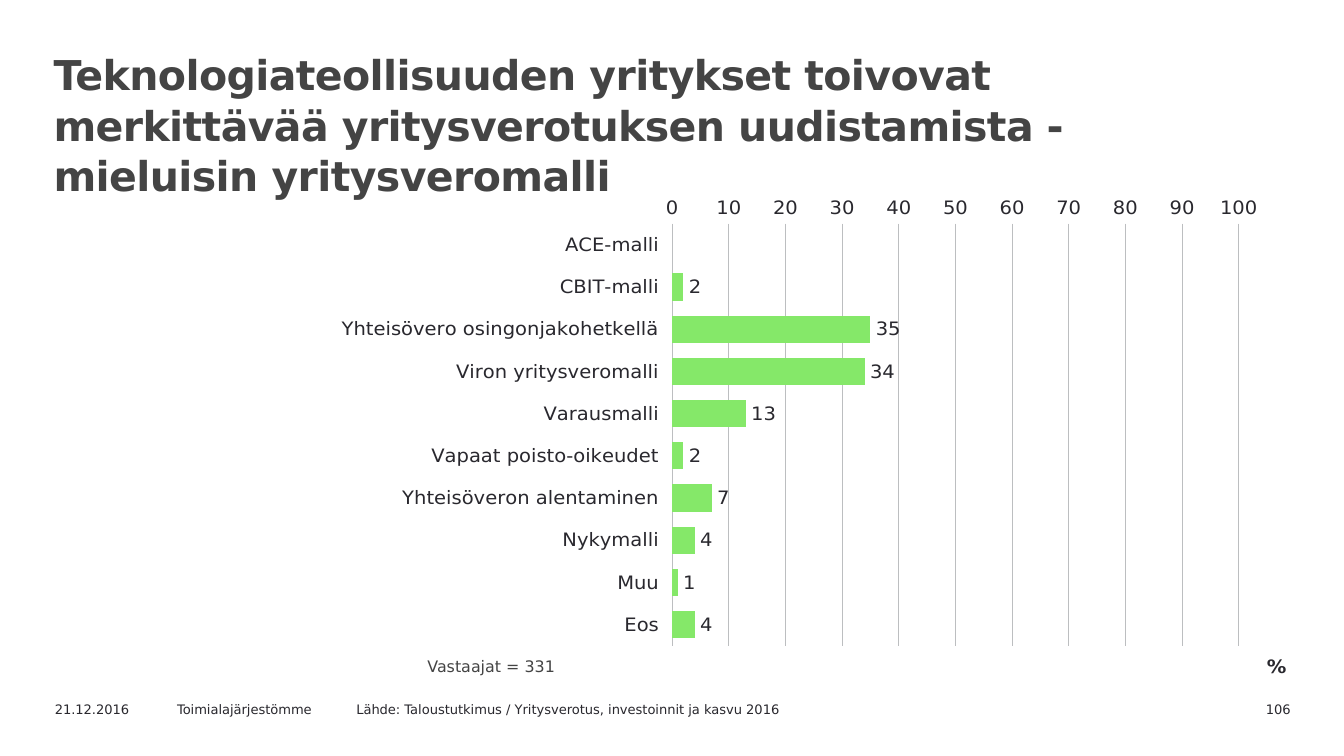
"""Build the slide about the company tax model preferred by technology companies."""
import lxml.etree
import pptx
import pptx.chart.data
import pptx.dml.color
import pptx.enum.chart
import pptx.enum.text
import pptx.oxml
import pptx.oxml.ns
import pptx.util

Pt = pptx.util.Pt
COLORS = {"title": "444444", "text": "29282E", "bar": "85E869", "grid": "BCBEC0"}
ANSWERS = {
    "ACE-malli": None,
    "CBIT-malli": 2,
    "Yhteisövero osingonjakohetkellä": 35,
    "Viron yritysveromalli": 34,
    "Varausmalli": 13,
    "Vapaat poisto-oikeudet": 2,
    "Yhteisöveron alentaminen": 7,
    "Nykymalli": 4,
    "Muu": 1,
    "Eos": 4,
}


def set_values(target, **values):
    """Set each named attribute on the target."""
    for name, value in values.items():
        setattr(target, name, value)


def rgb(name):
    """Return the named colour."""
    return pptx.dml.color.RGBColor.from_string(COLORS[name])


def manual_layout(x, y, **parts):
    """Return a chart layout element placed by fractions of the chart."""
    values = {"xMode": "edge", "yMode": "edge", "x": x, "y": y, **parts}
    body = "".join(f'<c:{tag} val="{value}"/>' for tag, value in values.items())
    return pptx.oxml.parse_xml(
        f'<c:layout {pptx.oxml.ns.nsdecls("c")}><c:manualLayout>{body}</c:manualLayout></c:layout>'
    )


class SlideBuilder:
    """Hold the style and the current slide, and add elements to it."""

    font_name = "DejaVu Sans"

    def __init__(self, deck):
        self.page = deck.slides.add_slide(deck.slide_layouts[5])

    def style_font(self, font, size, color="text", bold=False):
        """Format a font in the slide's typeface."""
        set_values(font, name=self.font_name, size=Pt(size), bold=bold)
        font.color.rgb = rgb(color)

    def title(self, text, left, top, width, height):
        """Move, fill and format the title placeholder."""
        box = self.page.shapes.title
        set_values(box, left=Pt(left), top=Pt(top), width=Pt(width), height=Pt(height))
        set_values(
            box.text_frame,
            text=text,
            word_wrap=True,
            auto_size=pptx.enum.text.MSO_AUTO_SIZE.NONE,
            vertical_anchor=pptx.enum.text.MSO_ANCHOR.TOP,
        )
        para = box.text_frame.paragraphs[0]
        set_values(para, alignment=pptx.enum.text.PP_ALIGN.LEFT, line_spacing=Pt(27))
        para._p.get_or_add_pPr().set("marL", str(Pt(1.5)))
        span = para.runs[0]
        self.style_font(span.font, 22, "title", True)
        span._r.get_or_add_rPr().set("spc", "-30")

    def text(self, text, left, top, width, height, size=7, color="text", align="LEFT",
             spacing=1.0, margins=(7.2, 3.6)):
        """Add a text box with one paragraph."""
        box = self.page.shapes.add_textbox(Pt(left), Pt(top), Pt(width), Pt(height))
        side, edge = map(Pt, margins)
        set_values(
            box.text_frame, text=text, word_wrap=True,
            margin_left=side, margin_right=side, margin_top=edge, margin_bottom=edge,
        )
        para = box.text_frame.paragraphs[0]
        set_values(para, alignment=pptx.enum.text.PP_ALIGN[align], line_spacing=spacing)
        self.style_font(para.runs[0].font, size, color)

    def bar_chart(self, answers, left, top, width, height):
        """Add the horizontal bar chart of the answers in per cent."""
        data = pptx.chart.data.CategoryChartData(number_format="General")
        data.categories = list(answers)
        data.add_series("Series 1", list(answers.values()))
        chart = self.page.shapes.add_chart(
            pptx.enum.chart.XL_CHART_TYPE.BAR_CLUSTERED,
            Pt(left), Pt(top), Pt(width), Pt(height), data,
        ).chart
        set_values(chart, has_legend=False, has_title=False)
        self.style_font(chart.font, 10.5)

        plot = chart.plots[0]
        set_values(plot, gap_width=55, vary_by_categories=False, has_data_labels=True)
        set_values(
            plot.data_labels,
            show_value=True,
            position=pptx.enum.chart.XL_LABEL_POSITION.OUTSIDE_END,
            number_format="#,##0",
            number_format_is_linked=False,
        )
        fill = plot.series[0].format.fill
        fill.solid()
        fill.fore_color.rgb = rgb("bar")

        for axis in (chart.category_axis, chart.value_axis):
            set_values(
                axis,
                major_tick_mark=pptx.enum.chart.XL_TICK_MARK.NONE,
                minor_tick_mark=pptx.enum.chart.XL_TICK_MARK.NONE,
            )
            axis.format.line.fill.background()
        set_values(
            chart.category_axis,
            reverse_order=True,
            crosses=pptx.enum.chart.XL_AXIS_CROSSES.MAXIMUM,
            tick_label_position=pptx.enum.chart.XL_TICK_LABEL_POSITION.LOW,
        )
        value_axis = chart.value_axis
        set_values(
            value_axis, minimum_scale=0, maximum_scale=100, major_unit=10,
            has_major_gridlines=True, has_title=True,
        )
        grid = value_axis.major_gridlines.format.line
        grid.width = Pt(0.5)
        grid.color.rgb = rgb("grid")

        frame = value_axis.axis_title.text_frame
        frame.text = "%"
        self.style_font(frame.paragraphs[0].runs[0].font, 10.5, bold=True)
        self.place(value_axis.axis_title._element, manual_layout(0.98, 0.94), "c:tx")
        area = chart._chartSpace.chart.plotArea
        self.place(area, manual_layout(0.5, 0.01, w=0.46, h=0.92))
        inner = area.find(".//" + pptx.oxml.ns.qn("c:yMode"))
        target = lxml.etree.Element(pptx.oxml.ns.qn("c:layoutTarget"), val="inner")
        inner.getparent().insert(0, target)

    def place(self, element, layout, after=None):
        """Put a layout into a chart element in place of any earlier one."""
        for old in element.findall(pptx.oxml.ns.qn("c:layout")):
            element.remove(old)
        if after:
            element.find(pptx.oxml.ns.qn(after)).addnext(layout)
        else:
            element.insert(0, layout)


def main():
    """Create the deck and save it."""
    deck = pptx.Presentation()
    set_values(deck, slide_width=Pt(720), slide_height=Pt(405))
    builder = SlideBuilder(deck)
    builder.title(
        "Teknologiateollisuuden yritykset toivovat merkittävää yritysverotuksen "
        "uudistamista - mieluisin yritysveromalli",
        20, 22.5, 629, 51,
    )
    footers = (
        ("106", 631, 67.5, "RIGHT"),
        ("21.12.2016", 22.3, 72, "LEFT"),
        ("Toimialajärjestömme", 87.8, 102, "LEFT"),
        ("Lähde: Taloustutkimus / Yritysverotus, investoinnit ja kasvu 2016", 183.8, 289.5, "LEFT"),
    )
    for text, left, width, align in footers:
        builder.text(text, left, 372.3, width, 13, align=align)
    builder.bar_chart(ANSWERS, 30.2, 105.8, 661, 260)
    builder.text(
        "Vastaajat = 331", 224, 350, 90.7, 16,
        size=8.5, color="title", spacing=0.9, margins=(5, 2.9),
    )
    deck.save("out.pptx")


if __name__ == "__main__":
    main()
